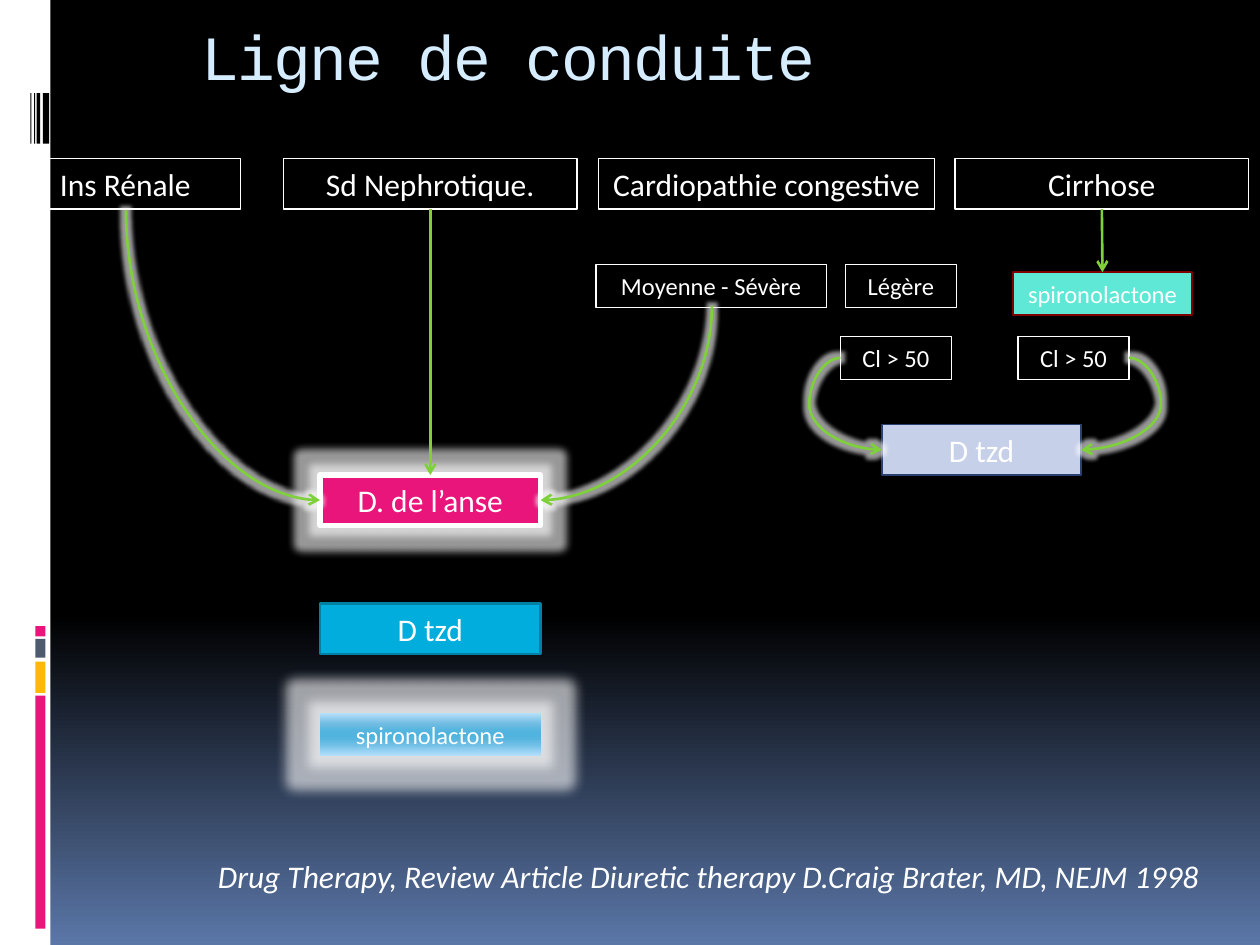
from math import cos, radians, sin

from lxml import etree
from pptx import Presentation
from pptx.dml.color import RGBColor
from pptx.enum.shapes import MSO_CONNECTOR, MSO_SHAPE
from pptx.enum.text import MSO_ANCHOR, PP_ALIGN
from pptx.oxml.ns import qn
from pptx.util import Inches, Pt

RECT = MSO_SHAPE.RECTANGLE
STRAIGHT, CURVE = MSO_CONNECTOR.STRAIGHT, MSO_CONNECTOR.CURVE
TOP, MIDDLE = MSO_ANCHOR.TOP, MSO_ANCHOR.MIDDLE
LEFT, CENTER = PP_ALIGN.LEFT, PP_ALIGN.CENTER

WHITE = RGBColor(0xFF, 0xFF, 0xFF)
BLACK = RGBColor(0x00, 0x00, 0x00)
NAVY = RGBColor(0x5B, 0x77, 0xA8)
PINK = RGBColor(0xEA, 0x15, 0x7A)
GOLD = RGBColor(0xFE, 0xB8, 0x0A)
SLATE = RGBColor(0x4E, 0x5B, 0x6F)
PALE = RGBColor(0xD6, 0xEC, 0xFF)
CYAN = RGBColor(0x00, 0xAD, 0xDC)
TEAL = RGBColor(0x00, 0x80, 0xA3)
LILAC = RGBColor(0xC7, 0xD0, 0xE9)
INDIGO = RGBColor(0x2C, 0x3F, 0x71)
MINT = RGBColor(0x5F, 0xE8, 0xD6)
MAROON = RGBColor(0x80, 0x00, 0x00)
GREEN = RGBColor(0x7F, 0xD1, 0x3B)

NIGHT = [(0, BLACK), (65, BLACK), (100, NAVY)]
SHEEN = [(pos, RGBColor.from_string(code)) for pos, code in (
    (0, "B7DFF8"), (25, "70BCE2"), (40, "55B5DF"), (50, "50B4DF"),
    (60, "55B5DF"), (75, "72C0E7"), (100, "B4DFFB"))]

BARS = [
    (0, 0, 0.4, 7.5, WHITE),
    (0.28, 5.52, 0.08, 1.85, PINK),
    (0.28, 5.25, 0.08, 0.25, GOLD),
    (0.28, 5.07, 0.08, 0.15, SLATE),
    (0.28, 4.97, 0.08, 0.08, PINK),
    (0.34, 0.74, 0.05, 0.4, BLACK),
    (0.29, 0.74, 0.03, 0.4, BLACK),
    (0.27, 0.74, 0.01, 0.4, BLACK),
    (0.24, 0.74, 0.01, 0.4, BLACK),
]


def shade(fill, root, stops):
    fill.gradient()
    fill.gradient_angle = 270
    group = next(root.iter(qn("a:gsLst")))
    for old in list(group):
        group.remove(old)
    for pos, color in stops:
        stop = etree.SubElement(group, qn("a:gs"), pos=str(pos * 1000))
        etree.SubElement(stop, qn("a:srgbClr"), val=str(color))


def effect(shape, glow=0):
    props = shape.element.spPr
    for old in props.findall(qn("a:effectLst")):
        props.remove(old)
    group = etree.SubElement(props, qn("a:effectLst"))
    if glow:
        halo = etree.SubElement(group, qn("a:glow"), rad=str(Pt(glow)))
        tint = etree.SubElement(halo, qn("a:srgbClr"), val=str(WHITE))
        etree.SubElement(tint, qn("a:alpha"), val="60000")


def write(frame, text, size=18, font="Calibri", color=WHITE, italic=False,
          align=CENTER, anchor=MIDDLE, wrap=False, space=0):
    frame.word_wrap = wrap
    frame.vertical_anchor = anchor
    para = frame.paragraphs[0]
    para.alignment = align
    run = para.add_run()
    run.text = text
    run.font.size = Pt(size)
    run.font.name = font
    run.font.italic = italic
    run.font.color.rgb = color
    if space:
        run.font._element.set("spc", str(space * 100))


def label(slide, x, y, w, h, text, inset=0.05, **style):
    frame = slide.shapes.add_textbox(
        Inches(x), Inches(y), Inches(w), Inches(h)).text_frame
    frame.margin_top = Inches(inset)
    write(frame, text, anchor=TOP, wrap=True, **style)


def block(slide, x, y, w, h, fill=None, line=None, width=0.75):
    shape = slide.shapes.add_shape(
        RECT, Inches(x), Inches(y), Inches(w), Inches(h))
    shape.shadow.inherit = False
    if fill is None:
        shape.fill.background()
    else:
        shape.fill.solid()
        shape.fill.fore_color.rgb = fill
    if line is None:
        shape.line.fill.background()
    else:
        shape.line.color.rgb = line
        shape.line.width = Pt(width)
    return shape


def box(slide, x, y, w, text, size=18, **look):
    shape = block(slide, x, y, w, 0.4 if size == 18 else 0.34, **look)
    write(shape.text_frame, text, size=size)
    return shape


def link(slide, kind, start, end, glow=0):
    wire = slide.shapes.add_connector(
        kind, *(Inches(value) for value in (*start, *end)))
    wire.line.color.rgb = GREEN
    wire.line.width = Pt(1.5)
    etree.SubElement(wire.line._get_or_add_ln(), qn("a:tailEnd"), type="arrow")
    effect(wire, glow)
    return wire


def drop(slide, source, target):
    wire = link(slide, STRAIGHT, (0, 0), (1, 1))
    wire.begin_connect(source, 2)
    wire.end_connect(target, 0)


def bend(slide, start, end, turn=0, adj=None):
    mid = [(a + b) / 2 for a, b in zip(start, end)]
    c, s = cos(radians(turn)), sin(radians(turn))

    def unturn(point):
        dx, dy = point[0] - mid[0], point[1] - mid[1]
        return mid[0] + dx * c + dy * s, mid[1] - dx * s + dy * c

    wire = link(slide, CURVE, unturn(start), unturn(end), glow=5)
    props = wire.element.spPr
    shape = props.find(qn("a:prstGeom"))
    if turn:
        props.find(qn("a:xfrm")).set("rot", str(turn * 60000))
        shape.set("prst", "curvedConnector2")
    if adj is not None:
        guides = shape.find(qn("a:avLst"))
        etree.SubElement(guides, qn("a:gd"), name="adj1",
                         fmla=f"val {round(adj * 100000)}")


def main():
    deck = Presentation()
    deck.slide_width, deck.slide_height = Inches(10), Inches(7.5)
    slide = deck.slides.add_slide(deck.slide_layouts[6])
    shade(slide.background.fill, slide.element, NIGHT)

    for x, y, w, h, color in BARS:
        block(slide, x, y, w, h, fill=color)
    label(slide, 1.5, 0, 9, 0.62, "Ligne de conduite", inset=0.14, size=36,
          font="Courier New", color=PALE, align=LEFT, space=-1)
    label(slide, 1.25, 6.75, 8.75, 0.75,
          "Drug Therapy, Review Article Diuretic therapy "
          "D.Craig Brater, MD, NEJM 1998", italic=True)

    box(slide, 0.08, 1.26, 1.83, "Ins Rénale", line=WHITE)
    nephro = box(slide, 2.25, 1.26, 2.33, "Sd Nephrotique.", line=WHITE)
    liver = box(slide, 7.58, 1.26, 2.33, "Cirrhose", line=WHITE)
    box(slide, 4.75, 1.26, 2.67, "Cardiopathie congestive", line=WHITE)

    box(slide, 2.54, 4.79, 1.75, "D tzd", fill=CYAN, line=TEAL, width=1.5)
    loop = box(slide, 2.54, 3.77, 1.75, "D. de l’anse",
               fill=PINK, line=WHITE, width=3)
    effect(loop, 9)
    box(slide, 7, 3.37, 1.58, "D tzd", fill=LILAC, line=INDIGO)
    spiro = box(slide, 8.04, 2.16, 1.42, "spironolactone", size=14,
                fill=MINT, line=MAROON)
    for x, y, w, text in (
            (6.71, 2.1, 0.88, "Légère"),
            (6.67, 2.67, 0.88, "Cl > 50"),
            (4.73, 2.1, 1.83, "Moyenne - Sévère"),
            (8.08, 2.67, 0.88, "Cl > 50")):
        box(slide, x, y, w, text, size=14, line=WHITE)
    last = box(slide, 2.54, 5.66, 1.75, "spironolactone", size=14)
    shade(last.fill, last.element, SHEEN)
    effect(last, 13)

    bend(slide, (1, 1.67), (2.54, 3.97), turn=270)
    bend(slide, (5.65, 2.43), (4.29, 3.97), turn=90)
    drop(slide, nephro, loop)
    drop(slide, liver, spiro)
    bend(slide, (6.67, 2.84), (7, 3.57), adj=-0.75)
    bend(slide, (8.96, 2.84), (8.58, 3.57), adj=-0.67)
    deck.save("out.pptx")


if __name__ == "__main__":
    main()
